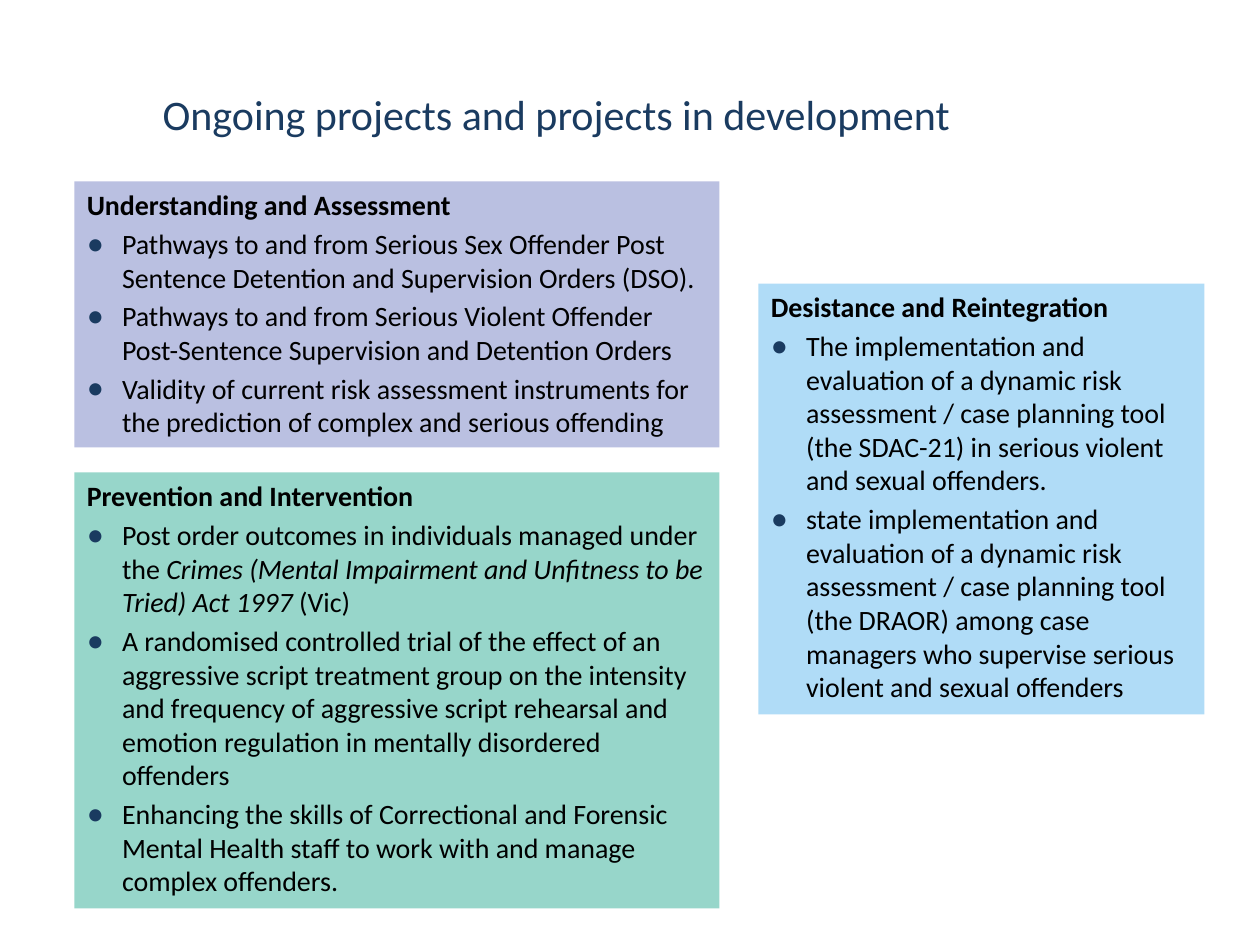
from lxml.etree import SubElement as Sub
from pptx import Presentation
from pptx.dml.color import RGBColor as Rgb
from pptx.enum.shapes import MSO_SHAPE as Shape
from pptx.enum.text import MSO_ANCHOR as Anchor, MSO_AUTO_SIZE as Fit, PP_ALIGN as Align
from pptx.oxml.ns import qn
from pptx.util import Inches, Pt

NAVY = "1A3B60"


def tint(code):
    return Rgb.from_string(code)


def write(para, text, size=16, color="000000", bold=False, italic=False):
    run = para.add_run()
    run.text = text
    font = run.font
    font.name, font.size = "Calibri", Pt(size)
    font.bold, font.italic = bold, italic
    font.color.rgb = tint(color)


class Deck:
    def __init__(self):
        self.show = Presentation()
        self.show.slide_width, self.show.slide_height = Inches(10), Inches(7.5)
        self.slide = self.show.slides.add_slide(self.show.slide_layouts[5])

    def place(self, shape, left, top, width, height):
        shape.left, shape.top = Inches(left), Inches(top)
        shape.width, shape.height = Inches(width), Inches(height)

    def frame(self, shape):
        frame = shape.text_frame
        frame.word_wrap = True
        frame.auto_size = Fit.SHAPE_TO_FIT_TEXT
        frame.vertical_anchor = Anchor.TOP
        frame.paragraphs[0].alignment = Align.LEFT
        return frame

    def title(self, text, *area):
        shape = self.slide.shapes.title
        self.place(shape, *area)
        write(self.frame(shape).paragraphs[0], text, size=24, color=NAVY)

    def bullet(self, para):
        props = para._p.get_or_add_pPr()
        props.set("marL", str(Inches(0.28)))
        props.set("indent", str(-Inches(0.28)))
        Sub(Sub(props, qn("a:buClr")), qn("a:srgbClr"), val=NAVY)
        Sub(props, qn("a:buSzPct"), val="123000")
        Sub(props, qn("a:buFont"), typeface="Calibri")
        Sub(props, qn("a:buChar"), char="•")

    def panel(self, head, items, fill, *area):
        shape = self.slide.shapes.add_shape(Shape.RECTANGLE, 0, 0, 0, 0)
        self.place(shape, *area)
        shape.shadow.inherit = False
        shape.fill.solid()
        shape.fill.fore_color.rgb = tint(fill)
        shape.line.fill.background()
        frame = self.frame(shape)
        first = frame.paragraphs[0]
        first.space_after = Pt(3)
        write(first, head, bold=True)
        for item in items:
            para = frame.add_paragraph()
            self.bullet(para)
            para.alignment = Align.LEFT
            para.space_after = Pt(3)
            for order, part in enumerate(item):
                write(para, part, italic=order == 1)

    def save(self):
        self.show.save("out.pptx")


def main():
    deck = Deck()
    deck.title("Ongoing projects and projects in development", 1.19, 0.65, 8.28, 0.5)
    deck.panel("Desistance and Reintegration", [
        ["The implementation and evaluation of a dynamic risk assessment / case planning tool "
         "(the SDAC-21) in serious violent and sexual offenders."],
        ["state implementation and evaluation of a dynamic risk assessment / case planning tool "
         "(the DRAOR) among case managers who supervise serious violent and sexual offenders"],
    ], "B0DCF7", 6.02, 2.25, 3.54, 3.42)
    deck.panel("Understanding and Assessment", [
        ["Pathways to and from Serious Sex Offender Post Sentence Detention and "
         "Supervision Orders (DSO)."],
        ["Pathways to and from Serious Violent Offender Post-Sentence Supervision and "
         "Detention Orders"],
        ["Validity of current risk assessment instruments for the prediction of complex "
         "and serious offending"],
    ], "BAC0E1", 0.59, 1.44, 5.12, 2.11)
    deck.panel("Prevention and Intervention", [
        ["Post order outcomes in individuals managed under the ",
         "Crimes (Mental Impairment and Unfitness to be Tried) Act 1997 ", "(Vic)"],
        ["A randomised controlled trial of the effect of an aggressive script treatment group "
         "on the intensity and frequency of aggressive script rehearsal and emotion regulation "
         "in mentally disordered offenders"],
        ["Enhancing the skills of Correctional and Forensic Mental Health staff to work with "
         "and manage complex offenders."],
    ], "97D6CA", 0.59, 3.75, 5.12, 3.46)
    deck.save()


if __name__ == "__main__":
    main()
